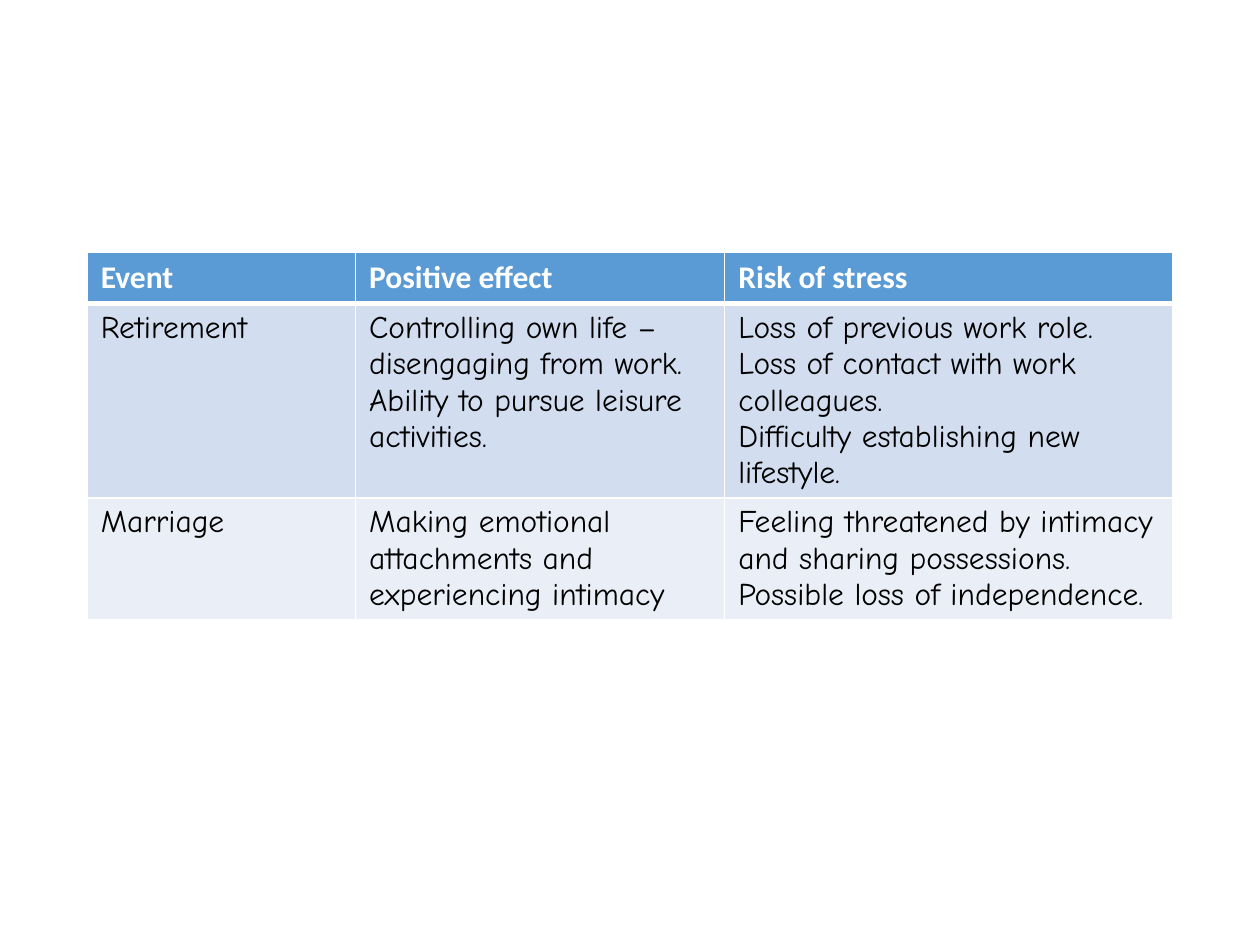
from lxml.etree import SubElement
from pptx import Presentation
from pptx.dml.color import RGBColor
from pptx.oxml.ns import qn
from pptx.util import Inches, Pt

WHITE = RGBColor(0xFF, 0xFF, 0xFF)
BLACK = RGBColor(0x00, 0x00, 0x00)
HEADER_BLUE = RGBColor(0x5B, 0x9B, 0xD5)
BAND_BLUE = RGBColor(0xD2, 0xDE, 0xEF)
PALE_BLUE = RGBColor(0xEA, 0xEF, 0xF7)

ROW_FILLS = [HEADER_BLUE, BAND_BLUE, PALE_BLUE]
COLUMN_WIDTHS = [2.13, 2.93, 3.56]
ROW_HEIGHT = 0.41
EVENTS = [
    [["Event"], ["Positive effect"], ["Risk of stress"]],
    [
        ["Retirement"],
        ["Controlling own life – disengaging from work.",
         "Ability to pursue leisure activities."],
        ["Loss of previous work role. Loss of contact with work colleagues.",
         "Difficulty establishing new lifestyle."],
    ],
    [
        ["Marriage"],
        ["Making emotional attachments and experiencing intimacy"],
        ["Feeling threatened by intimacy and sharing possessions.",
         "Possible loss of independence."],
    ],
]


def add_border(cell, side, points):
    properties = cell._tc.get_or_add_tcPr()
    line = SubElement(properties, qn(f"a:ln{side}"), w=str(Pt(points)))
    fill = SubElement(line, qn("a:solidFill"))
    SubElement(fill, qn("a:srgbClr"), val=str(WHITE))


deck = Presentation()
deck.slide_width = Inches(10)
deck.slide_height = Inches(7.5)
page = deck.slides.add_slide(deck.slide_layouts[6])

table = page.shapes.add_table(
    len(EVENTS), len(COLUMN_WIDTHS), Inches(0.69), Inches(2),
    Inches(sum(COLUMN_WIDTHS)), Inches(ROW_HEIGHT * len(EVENTS)),
).table
for column, width in zip(table.columns, COLUMN_WIDTHS):
    column.width = Inches(width)

for row_index, (row, event) in enumerate(zip(table.rows, EVENTS)):
    row.height = Inches(ROW_HEIGHT)
    is_header = row_index == 0
    for cell, lines in zip(row.cells, event):
        cell.margin_left = cell.margin_right = Inches(0.11)
        cell.margin_top = cell.margin_bottom = Inches(0.05)
        for side in "LRTB":
            beside_header = (row_index, side) in [(0, "B"), (1, "T")]
            add_border(cell, side, 3 if beside_header else 1)
        cell.fill.solid()
        cell.fill.fore_color.rgb = ROW_FILLS[row_index]
        frame = cell.text_frame
        for line_index, line in enumerate(lines):
            para = frame.add_paragraph() if line_index else frame.paragraphs[0]
            span = para.add_run()
            span.text = line
            span.font.size = Pt(18)
            span.font.name = "Calibri" if is_header else "Comic Neue"
            span.font.bold = is_header
            span.font.color.rgb = WHITE if is_header else BLACK

deck.save("out.pptx")
